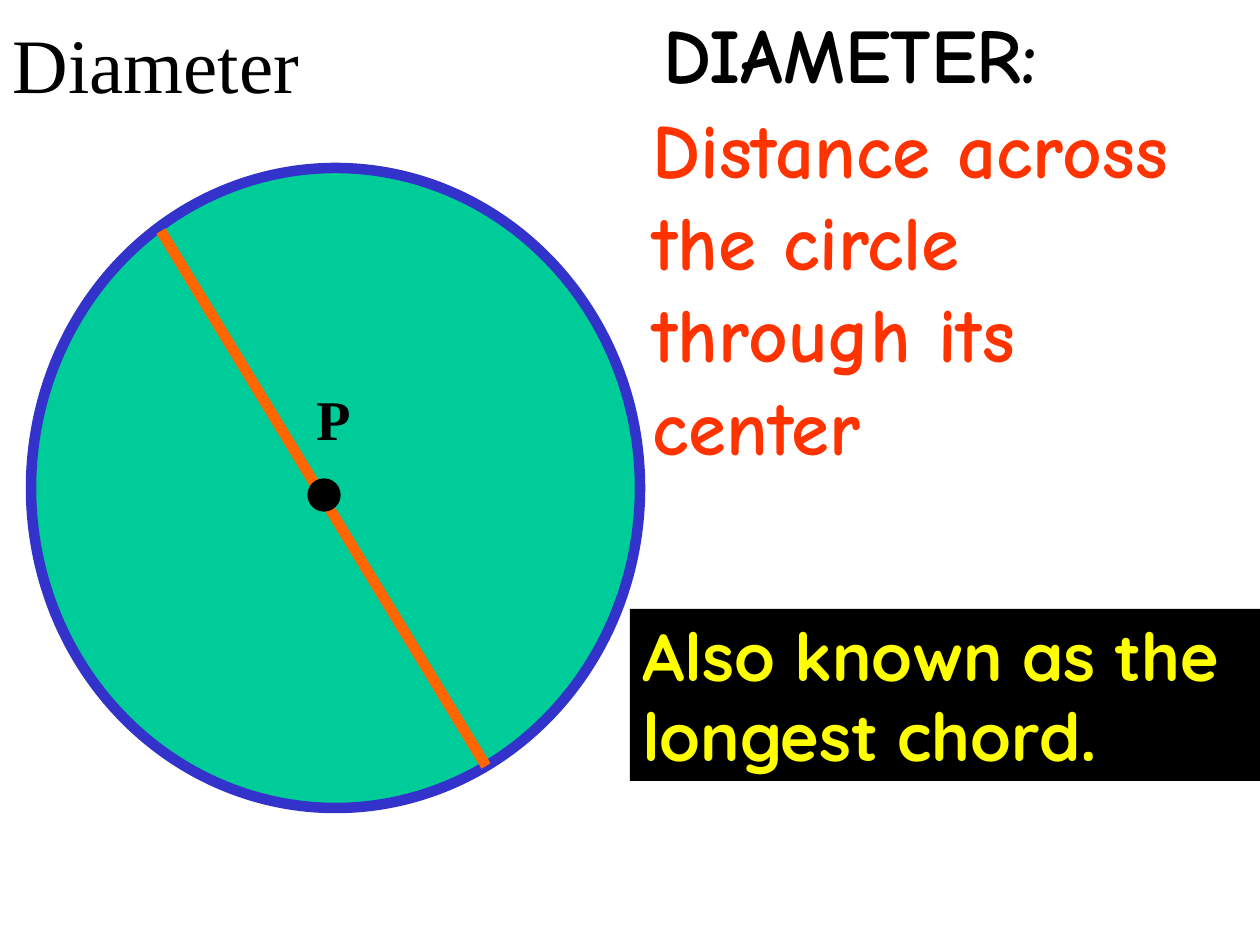
from dataclasses import dataclass

from lxml.etree import SubElement
from pptx import Presentation
from pptx.dml.color import RGBColor
from pptx.enum.shapes import MSO_CONNECTOR, MSO_SHAPE
from pptx.enum.text import MSO_ANCHOR, MSO_AUTO_SIZE, PP_ALIGN
from pptx.oxml.ns import qn
from pptx.util import Emu, Pt

PX_PER_INCH = 126


@dataclass(frozen=True)
class Theme:
    black: str = "000000"
    disc: str = "00CC99"
    rim: str = "3333CC"
    chord: str = "FF6600"
    definition: str = "FF3300"
    note: str = "FFFF00"
    serif: str = "Times New Roman"
    hand: str = "Comic Neue"
    rounded: str = "Quicksand"
    heading_size: int = 44
    note_size: int = 38
    label_size: int = 32
    thick: float = 6
    thin: float = 0.75


THEME = Theme()


def px(length):
    return Emu(round(length * 914400 / PX_PER_INCH))


def rgb(color):
    return RGBColor.from_string(color)


def write(frame, wording, font, size, color, bold=True,
          anchor=MSO_ANCHOR.TOP, fit=MSO_AUTO_SIZE.SHAPE_TO_FIT_TEXT):
    frame.word_wrap = True
    frame.auto_size = fit
    frame.vertical_anchor = anchor
    paragraph = frame.paragraphs[0]
    paragraph.alignment = PP_ALIGN.LEFT
    run = paragraph.add_run()
    run.text = wording
    run.font.name = font
    run.font.size = Pt(size)
    run.font.bold = bold
    run.font.color.rgb = rgb(color)


def add_text(slide, box, wording, font, size, color):
    holder = slide.shapes.add_textbox(*map(px, box))
    write(holder.text_frame, wording, font, size, color)


def add_filled(slide, kind, box, fill, line=None, width=0):
    figure = slide.shapes.add_shape(kind, *map(px, box))
    figure.shadow.inherit = False
    figure.fill.solid()
    figure.fill.fore_color.rgb = rgb(fill)
    if line:
        figure.line.color.rgb = rgb(line)
        figure.line.width = Pt(width)
    else:
        figure.line.fill.background()
    return figure


def place_title(slide, box):
    title = slide.shapes.title
    title.left, title.top, title.width, title.height = map(px, box)
    write(title.text_frame, "Diameter", THEME.serif, THEME.heading_size, THEME.black,
          bold=False, anchor=MSO_ANCHOR.MIDDLE, fit=MSO_AUTO_SIZE.NONE)


def draw_circle(slide, box):
    left, top, width, height = box
    add_filled(slide, MSO_SHAPE.OVAL, box, THEME.disc, THEME.rim, THEME.thick)
    add_text(slide, (left + 273, top + 210, 63, 79), "P",
             THEME.serif, THEME.label_size, THEME.black)
    diameter = slide.shapes.add_connector(
        MSO_CONNECTOR.STRAIGHT,
        px(left + 130), px(top + 63), px(left + 455), px(top + 598))
    diameter.line.color.rgb = rgb(THEME.chord)
    diameter.line.width = Pt(THEME.thick)
    SubElement(diameter._element.spPr, qn("a:effectLst"))
    add_filled(slide, MSO_SHAPE.OVAL, (left + 277, top + 311, 32, 32),
               THEME.black, THEME.black, THEME.thin)


def place_definition(slide, box):
    left, top, width, height = box
    add_text(slide, (left + 11, top, width - 11, 105), "DIAMETER:",
             THEME.hand, THEME.heading_size, THEME.black)
    add_text(slide, (left, top + 95, width - 43, height - 95),
             "Distance across the circle through its center",
             THEME.hand, THEME.heading_size, THEME.definition)


def place_note(slide, box):
    panel = add_filled(slide, MSO_SHAPE.RECTANGLE, box, THEME.black)
    write(panel.text_frame, "Also known as the longest chord.",
          THEME.rounded, THEME.note_size, THEME.note)


def main():
    deck = Presentation()
    deck.slide_width, deck.slide_height = px(1260), px(945)
    slide = deck.slides.add_slide(deck.slide_layouts[5])
    place_title(slide, (0, 0, 1081, 126))
    draw_circle(slide, (31, 168, 609, 640))
    place_definition(slide, (640, 0, 620, 477))
    place_note(slide, (630, 609, 630, 172))
    deck.save("out.pptx")


if __name__ == "__main__":
    main()
